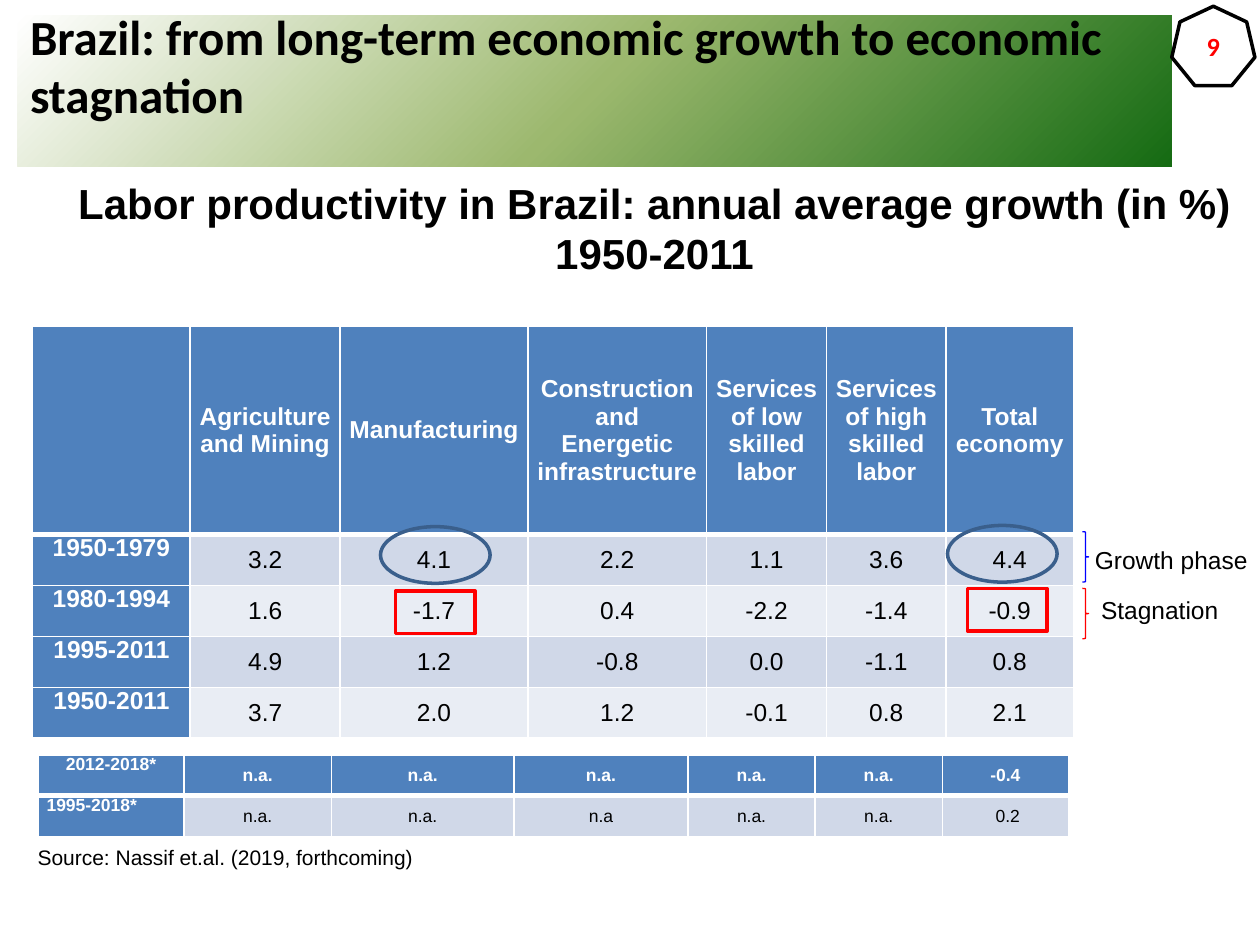
import copy
from dataclasses import dataclass
from typing import Optional

import lxml.etree
import pptx
import pptx.dml.color
import pptx.enum.shapes
import pptx.enum.text
import pptx.oxml.ns
import pptx.util

RGBColor = pptx.dml.color.RGBColor
Shapes = pptx.enum.shapes.MSO_SHAPE
Align = pptx.enum.text.PP_ALIGN
Anchor = pptx.enum.text.MSO_ANCHOR

BLACK = RGBColor(0, 0, 0)
WHITE = RGBColor(255, 255, 255)
RED = RGBColor(255, 0, 0)
BLUE = RGBColor(0, 0, 255)
RING = RGBColor(0x3A, 0x5F, 0x8C)
HEADER = RGBColor(0x4F, 0x81, 0xBD)
BANDS = (RGBColor(0xD0, 0xD8, 0xE8), RGBColor(0xE9, 0xED, 0xF4))
BANNER_COLORS = (WHITE, RGBColor(0x9C, 0xB8, 0x6E), RGBColor(0x15, 0x6B, 0x13))

GRID_COLUMNS, GRID_ROWS = 100, 75
UNIT = pptx.util.Inches(0.1)


@dataclass(frozen=True)
class Box:
    column: float
    row: float
    columns: float
    rows: float

    def emu(self) -> list[int]:
        return [round(n * UNIT) for n in (self.column, self.row, self.columns, self.rows)]


@dataclass(frozen=True)
class Style:
    size: float
    color: RGBColor = BLACK
    bold: bool = False
    font: str = "Arial"
    align: Align = Align.LEFT


@dataclass(frozen=True)
class Mark:
    preset: Shapes
    box: Box
    color: RGBColor
    width: float = 2
    fill: Optional[RGBColor] = None


@dataclass(frozen=True)
class Label:
    box: Box
    lines: tuple[str, ...]
    style: Style
    wrap: bool = True


@dataclass(frozen=True)
class Grid:
    box: Box
    columns: tuple[float, ...]
    rows: tuple[float, ...]
    size: float
    cells: tuple[tuple[str, ...], ...]
    left_rows: tuple[int, ...] = ()


MAIN_TABLE = Grid(
    Box(2.6, 25.9, 82.6, 32.7),
    (12.5, 11.9, 14.9, 14.2, 9.5, 9.5, 10.1), (16.5, 4.05, 4.05, 4.05, 4.05), 14,
    (("", "Agriculture and Mining", "Manufacturing", "Construction and Energetic infrastructure",
      "Services of low skilled labor", "Services of high skilled labor", "Total economy"),
     ("1950-1979", "3.2", "4.1", "2.2", "1.1", "3.6", "4.4"),
     ("1980-1994", "1.6", "-1.7", "0.4", "-2.2", "-1.4", "-0.9"),
     ("1995-2011", "4.9", "1.2", "-0.8", "0.0", "-1.1", "0.8"),
     ("1950-2011", "3.7", "2.0", "1.2", "-0.1", "0.8", "2.1")))

RECENT_TABLE = Grid(
    Box(3, 59.9, 81.8, 6.5),
    (11.6, 11.7, 14.5, 13.8, 10.1, 10.1, 10), (3.25, 3.25), 10,
    (("2012-2018*", "n.a.", "n.a.", "n.a.", "n.a.", "n.a.", "-0.4"),
     ("1995-2018*", "n.a.", "n.a.", "n.a", "n.a.", "n.a.", " 0.2")),
    left_rows=(1,))

LABELS = (
    Label(Box(4.8, 13.6, 94.3, 9.1),
          ("Labor productivity in Brazil: annual average growth (in %)", "1950-2011"),
          Style(24, bold=True, align=Align.CENTER), wrap=False),
    Label(Box(2, 66.5, 32.1, 3), ("Source: Nassif et.al. (2019, forthcoming)",), Style(12), wrap=False),
    Label(Box(85.9, 42.8, 14.2, 3.4), ("Growth phase",), Style(14)),
    Label(Box(86.4, 46.7, 13.7, 3.4), ("Stagnation",), Style(14)),
)

MARKS = (
    Mark(Shapes.RIGHT_BRACE, Box(85.9, 42.2, 0.5, 4), BLUE, 0.75),
    Mark(Shapes.RIGHT_BRACE, Box(85.9, 46.7, 0.5, 4), RED, 0.75),
    Mark(Shapes.OVAL, Box(75.2, 41.7, 8.7, 4.5), RING),
    Mark(Shapes.OVAL, Box(30.2, 41.8, 8.7, 4.5), RING),
    Mark(Shapes.RECTANGLE, Box(76.8, 46.7, 6.3, 3.4), RED),
    Mark(Shapes.RECTANGLE, Box(31.4, 46.9, 6.3, 3.4), RED),
)


def write(paragraph, text: str, style: Style) -> None:
    paragraph.alignment = style.align
    run = paragraph.add_run()
    run.text = text
    run.font.name = style.font
    run.font.size = pptx.util.Pt(style.size)
    run.font.bold = style.bold
    run.font.color.rgb = style.color


def draw_banner(slide) -> None:
    shape = slide.shapes.add_shape(Shapes.RECTANGLE, *Box(1.4, 1.2, 91.6, 12).emu())
    shape.shadow.inherit = False
    shape.line.fill.background()
    shape.fill.gradient()
    shape.fill.gradient_angle = 315
    stop_list = shape._element.spPr.find(".//" + pptx.oxml.ns.qn("a:gsLst"))
    stop_list.append(copy.deepcopy(stop_list[0]))
    for index, (stop, color) in enumerate(zip(shape.fill.gradient_stops, BANNER_COLORS)):
        stop.position = index / 2
        stop.color.rgb = color
    frame = shape.text_frame
    frame.word_wrap = True
    frame.vertical_anchor = Anchor.MIDDLE
    frame.margin_bottom = round(4.6 * UNIT)
    write(frame.paragraphs[0], "Brazil: from long-term economic growth to economic stagnation",
          Style(28, bold=True, font="Calibri"))


def draw_mark(slide, mark: Mark):
    shape = slide.shapes.add_shape(mark.preset, *mark.box.emu())
    shape.shadow.inherit = False
    if mark.fill is None:
        shape.fill.background()
    else:
        shape.fill.solid()
        shape.fill.fore_color.rgb = mark.fill
    shape.line.color.rgb = mark.color
    shape.line.width = pptx.util.Pt(mark.width)
    return shape


def draw_page_number(slide) -> None:
    shape = draw_mark(slide, Mark(Shapes.HEPTAGON, Box(93, 0.5, 6.6, 6.3), BLACK, fill=WHITE))
    shape.text_frame.vertical_anchor = Anchor.MIDDLE
    write(shape.text_frame.paragraphs[0], "9", Style(15, RED, True, "Calibri", Align.CENTER))


def draw_label(slide, label: Label) -> None:
    frame = slide.shapes.add_textbox(*label.box.emu()).text_frame
    frame.word_wrap = label.wrap
    frame.auto_size = pptx.enum.text.MSO_AUTO_SIZE.SHAPE_TO_FIT_TEXT
    for index, line in enumerate(label.lines):
        paragraph = frame.add_paragraph() if index else frame.paragraphs[0]
        write(paragraph, line, label.style)


def set_borders(cell, top: float, bottom: float) -> None:
    qn = pptx.oxml.ns.qn
    properties = cell._tc.get_or_add_tcPr()
    for index, (side, width) in enumerate((("L", 1), ("R", 1), ("T", top), ("B", bottom))):
        line = lxml.etree.Element(qn("a:ln" + side), w=str(pptx.util.Pt(width)))
        fill = lxml.etree.SubElement(line, qn("a:solidFill"))
        lxml.etree.SubElement(fill, qn("a:srgbClr"), val=str(WHITE))
        properties.insert(index, line)


def draw_table(slide, grid: Grid) -> None:
    table = slide.shapes.add_table(len(grid.rows), len(grid.columns), *grid.box.emu()).table
    table.horz_banding = False
    for column, width in zip(table.columns, grid.columns):
        column.width = round(width * UNIT)
    for row, height in zip(table.rows, grid.rows):
        row.height = round(height * UNIT)
    for row, texts in enumerate(grid.cells):
        for column, text in enumerate(texts):
            cell = table.cell(row, column)
            heading = row == 0 or column == 0
            cell.fill.solid()
            cell.fill.fore_color.rgb = HEADER if heading else BANDS[(row - 1) % 2]
            set_borders(cell, 3 if row == 1 else 1, 3 if row == 0 else 1)
            cell.margin_left = cell.margin_right = round(0.7 * UNIT)
            cell.margin_top = cell.margin_bottom = 0
            cell.vertical_anchor = Anchor.MIDDLE if column else Anchor.TOP
            left = column == 0 and row in grid.left_rows
            if text:
                write(cell.text_frame.paragraphs[0], text,
                      Style(grid.size, WHITE if heading else BLACK, heading,
                            align=Align.LEFT if left else Align.CENTER))


def main() -> None:
    presentation = pptx.Presentation()
    presentation.slide_width = GRID_COLUMNS * UNIT
    presentation.slide_height = GRID_ROWS * UNIT
    slide = presentation.slides.add_slide(presentation.slide_layouts[6])
    draw_banner(slide)
    draw_page_number(slide)
    draw_table(slide, MAIN_TABLE)
    for label in LABELS:
        draw_label(slide, label)
    for mark in MARKS:
        draw_mark(slide, mark)
    draw_table(slide, RECENT_TABLE)
    presentation.save("out.pptx")


if __name__ == "__main__":
    main()
